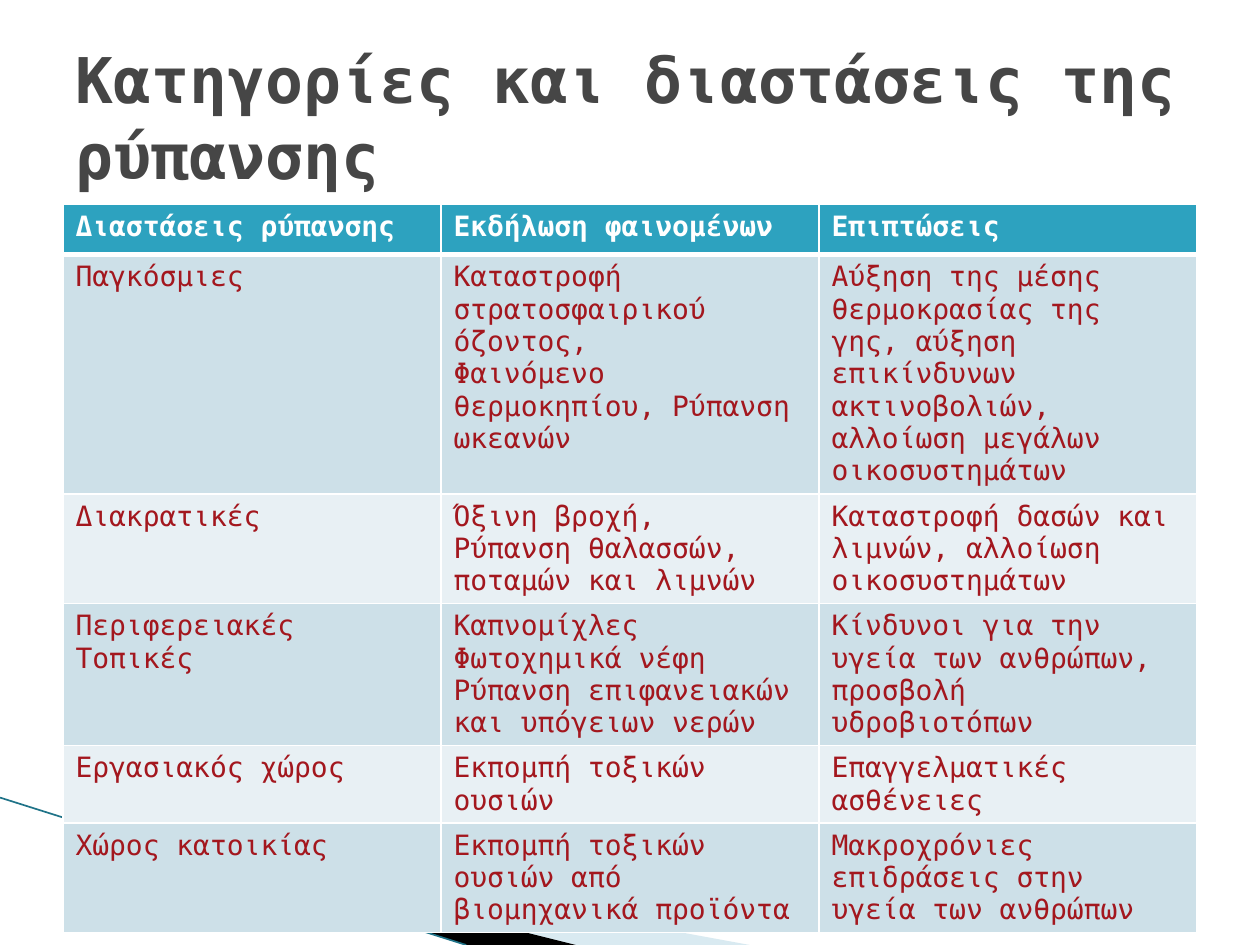
from lxml import etree
from pptx import Presentation
from pptx.dml.color import RGBColor
from pptx.enum.shapes import MSO_CONNECTOR
from pptx.enum.text import MSO_ANCHOR, MSO_AUTO_SIZE, PP_ALIGN
from pptx.oxml.ns import qn
from pptx.util import Inches, Pt

STRAIGHT = MSO_CONNECTOR.STRAIGHT
LEFT = PP_ALIGN.LEFT
MIDDLE = MSO_ANCHOR.MIDDLE
NO_FIT = MSO_AUTO_SIZE.NONE

FONT = "DejaVu Sans Mono"
WHITE = RGBColor(0xFF, 0xFF, 0xFF)
BLACK = RGBColor(0x00, 0x00, 0x00)
GREY = RGBColor(0x46, 0x46, 0x46)
RED = RGBColor(0xA3, 0x17, 0x1E)
HEADER = RGBColor(0x2D, 0xA2, 0xBF)
BANDS = RGBColor(0xE8, 0xF0, 0xF4), RGBColor(0xCD, 0xE0, 0xE8)
PALE_BLUE = RGBColor(0xA0, 0xCB, 0xDC)
TEAL = RGBColor(0x1F, 0x73, 0x88)

MARGIN = 0.5
TABLE_TOP = 1.62
ROW_HEIGHTS = [0.4, 1.9, 0.87, 1.12, 0.61, 0.87]
ROWS = [
    ["Διαστάσεις ρύπανσης", "Εκδήλωση φαινομένων", "Επιπτώσεις"],
    ["Παγκόσμιες",
     "Καταστροφή στρατοσφαιρικού όζοντος,\nΦαινόμενο θερμοκηπίου, Ρύπανση ωκεανών",
     "Αύξηση της μέσης θερμοκρασίας της γης, αύξηση επικίνδυνων "
     "ακτινοβολιών, αλλοίωση μεγάλων οικοσυστημάτων"],
    ["Διακρατικές",
     "Όξινη βροχή,\nΡύπανση θαλασσών, ποταμών και λιμνών",
     "Καταστροφή δασών και λιμνών, αλλοίωση οικοσυστημάτων"],
    ["Περιφερειακές\nΤοπικές",
     "Καπνομίχλες\nΦωτοχημικά νέφη\nΡύπανση επιφανειακών και υπόγειων νερών",
     "Κίνδυνοι για την υγεία των ανθρώπων, προσβολή υδροβιοτόπων"],
    ["Εργασιακός χώρος", "Εκπομπή τοξικών ουσιών", "Επαγγελματικές ασθένειες"],
    ["Χώρος κατοικίας",
     "Εκπομπή τοξικών ουσιών από βιομηχανικά προϊόντα",
     "Μακροχρόνιες επιδράσεις στην υγεία των ανθρώπων"],
]
# Corner points in inches, fill colour, opacity in percent
WEDGES = [
    ([(0.55, 6.51), (5.95, 7.5), (4.56, 7.5), (0.55, 6.5)], PALE_BLUE, 40),
    ([(0.53, 6.49), (4.57, 7.5), (3.7, 7.5), (0.54, 6.5)], BLACK, 100),
]


def write(frame, text, size, color, bold=False):
    frame.text = text
    for para in frame.paragraphs:
        para.alignment = LEFT
        for span in para.runs:
            span.font.name = FONT
            span.font.size = Pt(size)
            span.font.bold = bold
            span.font.color.rgb = color


def add_border(cell, side, width):
    """Add a white border; call for L, R, T, B in that order, before the fill."""
    line = etree.SubElement(cell._tc.get_or_add_tcPr(), qn(f"a:ln{side}"), w=str(Pt(width)))
    solid = etree.SubElement(line, qn("a:solidFill"))
    etree.SubElement(solid, qn("a:srgbClr"), val=str(WHITE))


deck = Presentation()
deck.slide_width, deck.slide_height = Inches(10), Inches(7.5)
page = deck.slides.add_slide(deck.slide_layouts[5])
title = page.shapes.title

# Corner decoration, behind the title and the table
for points, color, opacity in WEDGES:
    corners = [(Inches(x), Inches(y)) for x, y in points]
    builder = page.shapes.build_freeform(*corners[0])
    builder.add_line_segments(corners[1:])
    wedge = builder.convert_to_shape()
    wedge.shadow.inherit = False
    wedge.line.fill.background()
    wedge.fill.solid()
    wedge.fill.fore_color.rgb = color
    if opacity < 100:
        tint = wedge._element.spPr.find(qn("a:solidFill"))[0]
        etree.SubElement(tint, qn("a:alpha"), val=str(opacity * 1000))

edge = page.shapes.add_connector(STRAIGHT, 0, Inches(6.33), Inches(3.7), Inches(7.5))
edge.line.color.rgb = TEAL
edge.line.width = Pt(0.95)
etree.SubElement(edge._element.spPr, qn("a:effectLst"))

page.shapes._spTree.append(title._element)
title.left, title.top = Inches(MARGIN), Inches(0.3)
title.width, title.height = Inches(9), Inches(1.25)
title.text_frame.word_wrap = True
title.text_frame.auto_size = NO_FIT
title.text_frame.vertical_anchor = MIDDLE
write(title.text_frame, "Κατηγορίες και διαστάσεις της ρύπανσης", 36, GREY, bold=True)

table = page.shapes.add_table(
    len(ROWS), len(ROWS[0]), Inches(MARGIN), Inches(TABLE_TOP),
    Inches(9), Inches(sum(ROW_HEIGHTS))).table
for r, texts in enumerate(ROWS):
    table.rows[r].height = Inches(ROW_HEIGHTS[r])
    is_header = r == 0
    for c, text in enumerate(texts):
        cell = table.cell(r, c)
        write(cell.text_frame, text, 16, WHITE if is_header else RED, bold=is_header)
        add_border(cell, "L", 1)
        add_border(cell, "R", 1)
        add_border(cell, "T", 3 if r == 1 else 1)
        add_border(cell, "B", 3 if is_header else 1)
        cell.fill.solid()
        cell.fill.fore_color.rgb = HEADER if is_header else BANDS[r % 2]

deck.save("out.pptx")
